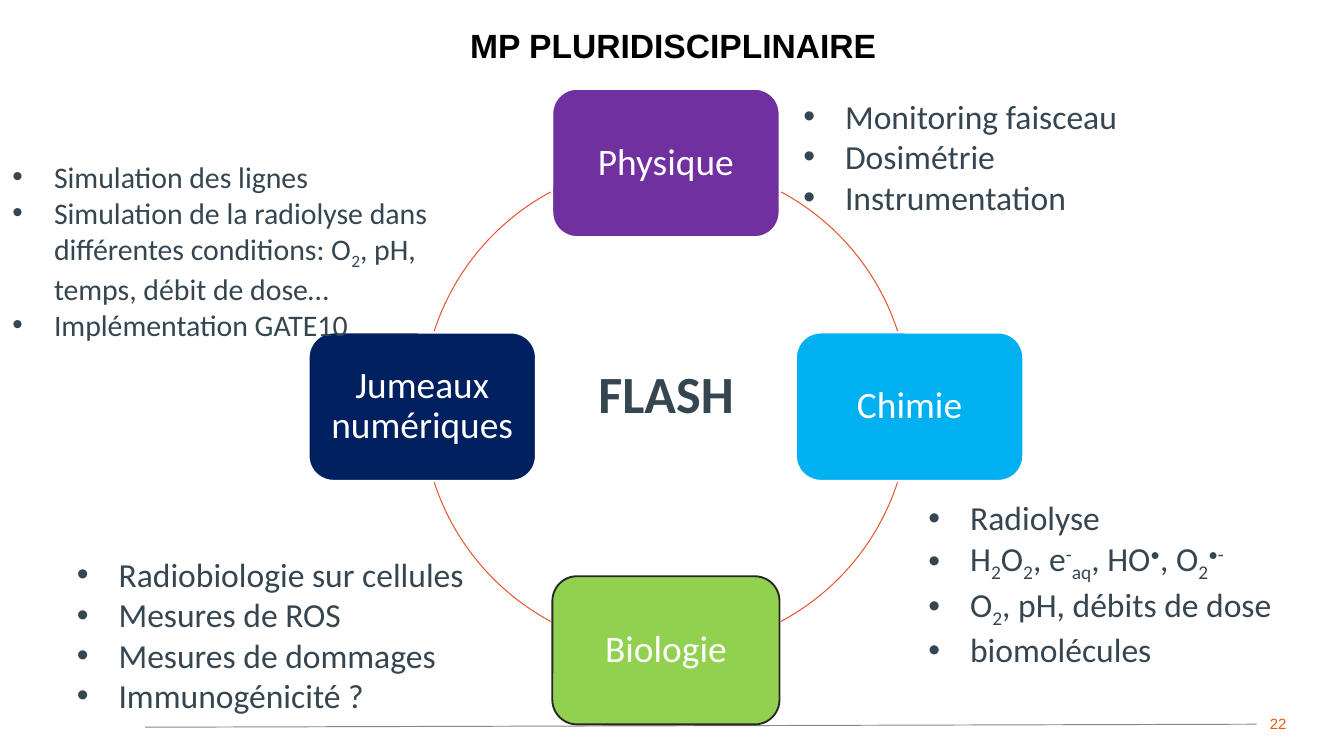
from lxml.etree import SubElement
from pptx import Presentation
from pptx.dml.color import RGBColor
from pptx.enum.shapes import MSO_CONNECTOR, MSO_SHAPE
from pptx.enum.text import MSO_ANCHOR, PP_ALIGN
from pptx.oxml.ns import qn
from pptx.util import Inches, Pt

COLORS = {
    "title": "000000", "text": "364651", "white": "FFFFFF", "accent": "E84C22",
    "number": "EA560D", "rule": "878787", "outline": "262626",
    "physics": "7030A0", "chemistry": "00B0F0", "biology": "92D050", "twins": "002060",
}
TITLE = "MP PLURIDISCIPLINAIRE"
SUB, SUPER = -25, 30

THEMES = [
    ("Physique", "physics", "white", (0, -1)),
    ("Chimie", "chemistry", "white", (1, 0)),
    ("Biologie", "biology", "outline", (0, 1)),
    ("Jumeaux numériques", "twins", "white", (-1, 0)),
]
LISTS = [
    ((58.8, 11.8, 33.3, 18), 18, [
        ["Monitoring faisceau"], ["Dosimétrie"], ["Instrumentation"],
    ]),
    ((68.1, 64.9, 36.2, 23.3), 18, [
        ["Radiolyse"],
        ["H", ("2", SUB), "O", ("2", SUB), ", e", ("-", SUPER), ("aq", SUB),
         ", HO", ("•", SUPER), ", O", ("2", SUB), ("•-", SUPER)],
        ["O", ("2", SUB), ", pH, débits de dose"],
        ["biomolécules"],
    ]),
    ((-0.06, 20.1, 39.7, 25.8), 16, [
        ["Simulation des lignes"],
        ["Simulation de la radiolyse dans différentes conditions: O", ("2", SUB),
         ", pH, ", None, "temps, débit de dose…"],
        ["Implémentation GATE10"],
    ]),
    ((4.74, 72.4, 40.8, 23.3), 18, [
        ["Radiobiologie sur cellules"], ["Mesures de ROS"],
        ["Mesures de dommages"], ["Immunogénicité ?"],
    ]),
]
CENTER = (49.55, 53.8)
RADIUS = 18.13
THEME_SIZE = (16.9, 19.6)
ARC_STARTS = (18.1, 118.2, 198.1, 298.2)
ARC_SWEEP = 43.7

deck = Presentation()
deck.slide_width = Inches(10)
deck.slide_height = deck.slide_width * 9 // 16
page = deck.slides.add_slide(deck.slide_layouts[5])


def across(share):
    return round(deck.slide_width * share / 100)


def down(share):
    return round(deck.slide_height * share / 100)


def area(left, top, width, height):
    return across(left), down(top), across(width), down(height)


def color(name):
    return RGBColor.from_string(COLORS[name])


def style(font, size, name, face="Calibri", bold=False):
    font.size, font.name, font.bold = Pt(size), face, bold
    font.color.rgb = color(name)


def outline(shape, name, width):
    shape.line.color.rgb = color(name)
    shape.line.width = Pt(width)


def add_text(place, text, size, name, face="Calibri", bold=False, align=PP_ALIGN.LEFT):
    box = page.shapes.add_textbox(*area(*place))
    box.text_frame.word_wrap = True
    box.text_frame.text = text
    para = box.text_frame.paragraphs[0]
    para.alignment = align
    style(para.runs[0].font, size, name, face, bold)


def add_list(place, size, items):
    frame = page.shapes.add_textbox(*area(*place)).text_frame
    frame.word_wrap = True
    for index, spans in enumerate(items):
        para = frame.paragraphs[0] if index == 0 else frame.add_paragraph()
        properties = para._p.get_or_add_pPr()
        properties.set("marL", str(Inches(0.31)))
        properties.set("indent", str(Inches(-0.31)))
        SubElement(properties, qn("a:buFont"), typeface="Arial")
        SubElement(properties, qn("a:buChar"), char="•")
        style(para.font, size, "text")
        for span in spans:
            if span is None:
                para.add_line_break()
                continue
            text, baseline = span if isinstance(span, tuple) else (span, 0)
            run = para.add_run()
            run.text = text
            style(run.font, size, "text")
            if baseline:
                run._r.get_or_add_rPr().set("baseline", str(baseline * 1000))


rule = page.shapes.add_connector(
    MSO_CONNECTOR.STRAIGHT, across(10.8), down(96.2), across(93.5), down(95.8))
outline(rule, "rule", 0.5)
SubElement(rule._element.spPr, qn("a:effectLst"))
add_text((93.5, 93.6, 4.3, 4.4), "22", 8, "number", "Arial")

center_x, center_y = across(CENTER[0]), down(CENTER[1])
radius = across(RADIUS)
for start in ARC_STARTS:
    arc = page.shapes.add_shape(
        MSO_SHAPE.ARC, center_x - radius, center_y - radius, 2 * radius, 2 * radius)
    arc.adjustments[0] = start * 0.6
    arc.adjustments[1] = (start + ARC_SWEEP) * 0.6
    arc.shadow.inherit = False
    arc.fill.background()
    outline(arc, "accent", 0.5)

width, height = across(THEME_SIZE[0]), down(THEME_SIZE[1])
for label, fill, edge, (step_x, step_y) in THEMES:
    theme = page.shapes.add_shape(
        MSO_SHAPE.ROUNDED_RECTANGLE, center_x + step_x * radius - width // 2,
        center_y + step_y * radius - height // 2, width, height)
    theme.shadow.inherit = False
    theme.fill.solid()
    theme.fill.fore_color.rgb = color(fill)
    outline(theme, edge, 1)
    frame = theme.text_frame
    frame.word_wrap = True
    frame.vertical_anchor = MSO_ANCHOR.MIDDLE
    frame.text = label
    para = frame.paragraphs[0]
    para.alignment, para.line_spacing = PP_ALIGN.CENTER, 0.9
    style(para.runs[0].font, 20, "white")

title = page.shapes.title
title.left, title.top, title.width, title.height = area(7, 0, 86.2, 9.6)
title.text_frame.text = TITLE
title.text_frame.vertical_anchor = MSO_ANCHOR.BOTTOM
heading = title.text_frame.paragraphs[0]
heading.alignment, heading.line_spacing = PP_ALIGN.CENTER, 0.85
style(heading.runs[0].font, 18, "title", "Arial", True)

add_text((39.6, 46.95, 20.8, 10.1), "FLASH ", 28, "text", bold=True, align=PP_ALIGN.CENTER)
for place, size, items in LISTS:
    add_list(place, size, items)

deck.save("out.pptx")
